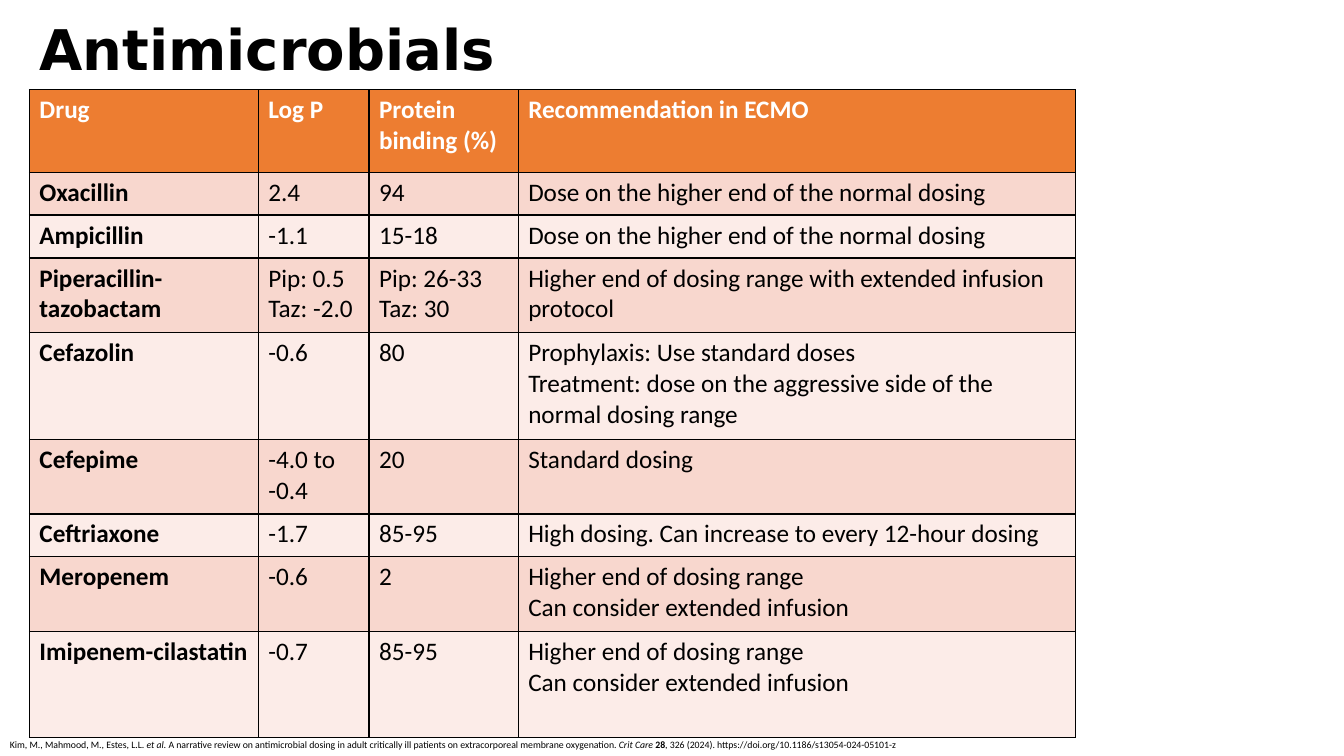
"""Build the slide on antimicrobial dosing in ECMO."""
from lxml.etree import SubElement
from pptx import Presentation
from pptx.dml.color import RGBColor
from pptx.enum.text import MSO_ANCHOR, PP_ALIGN
from pptx.oxml.ns import qn
from pptx.util import Cm, Pt

COLORS = {
    "text": "000000",
    "header_text": "FFFFFF",
    "header": "ED7D31",
    "odd_row": "F8D7CE",
    "even_row": "FCECE8",
    "border": "000000",
}
COLUMN_WIDTHS = [5.77, 2.79, 3.76, 14.05]
ROW_HEIGHTS = [2.08, 1.08, 1.08, 1.88, 2.69, 1.88, 1.08, 1.88, 2.67]
ROWS = [
    ("Drug", "Log P", "Protein binding (%)", "Recommendation in ECMO"),
    ("Oxacillin", "2.4", "94", "Dose on the higher end of the normal dosing"),
    ("Ampicillin", "-1.1", "15-18", "Dose on the higher end of the normal dosing"),
    ("Piperacillin-tazobactam", "Pip: 0.5\nTaz: -2.0", "Pip: 26-33\nTaz: 30",
     "Higher end of dosing range with extended infusion protocol"),
    ("Cefazolin", "-0.6", "80",
     "Prophylaxis: Use standard doses\v"
     "Treatment: dose on the aggressive side of the normal dosing range"),
    ("Cefepime", "-4.0 to -0.4", "20", "Standard dosing"),
    ("Ceftriaxone", "-1.7", "85-95", "High dosing. Can increase to every 12-hour dosing"),
    ("Meropenem", "-0.6", "2", "Higher end of dosing range\nCan consider extended infusion"),
    ("Imipenem-cilastatin", "-0.7", "85-95",
     "Higher end of dosing range\nCan consider extended infusion"),
]
CITATION = [
    ("Kim, M., Mahmood, M., Estes, L.L. ", False, False),
    ("et al.", False, True),
    (" A narrative review on antimicrobial dosing in adult critically ill patients"
     " on extracorporeal membrane oxygenation. ", False, False),
    ("Crit Care ", False, True),
    ("28", True, False),
    (", 326 (2024). https://doi.org/10.1186/s13054-024-05101-z", False, False),
]


def set_font(font, name, size, color, bold=False):
    font.name = name
    font.size = Pt(size)
    font.bold = bold
    font.color.rgb = RGBColor.from_string(COLORS[color])


def add_borders(cell):
    properties = cell._tc.get_or_add_tcPr()
    for side in ("lnL", "lnR", "lnT", "lnB"):
        line = SubElement(properties, qn(f"a:{side}"), w=str(Pt(1)))
        fill = SubElement(line, qn("a:solidFill"))
        SubElement(fill, qn("a:srgbClr"), val=COLORS["border"])


presentation = Presentation()
presentation.slide_width = Cm(33.87)
presentation.slide_height = Cm(19.05)
slide = presentation.slides.add_slide(presentation.slide_layouts[5])

title = slide.shapes.title
title.left, title.top, title.width, title.height = Cm(0.74), Cm(0.43), Cm(18), Cm(1.8)
title.text_frame.text = "Antimicrobials"
title.text_frame.vertical_anchor = MSO_ANCHOR.MIDDLE
paragraph = title.text_frame.paragraphs[0]
paragraph.alignment = PP_ALIGN.LEFT
paragraph.line_spacing = 0.9
set_font(paragraph.font, "DejaVu Sans", 40, "text", bold=True)

table = slide.shapes.add_table(
    len(ROWS), len(COLUMN_WIDTHS), Cm(0.74), Cm(2.26),
    Cm(sum(COLUMN_WIDTHS)), Cm(sum(ROW_HEIGHTS))).table
for column, width in zip(table.columns, COLUMN_WIDTHS):
    column.width = Cm(width)
for row_index, (row, height, texts) in enumerate(zip(table.rows, ROW_HEIGHTS, ROWS)):
    row.height = Cm(height)
    is_header = row_index == 0
    row_fill = "header" if is_header else "odd_row" if row_index % 2 else "even_row"
    for column_index, (cell, text) in enumerate(zip(row.cells, texts)):
        add_borders(cell)
        cell.fill.solid()
        cell.fill.fore_color.rgb = RGBColor.from_string(COLORS[row_fill])
        cell.text_frame.text = text
        for paragraph in cell.text_frame.paragraphs:
            set_font(paragraph.font, "Calibri", 18, "header_text" if is_header else "text",
                     bold=is_header or column_index == 0)

citation = slide.shapes.add_textbox(Cm(0), Cm(18.49), Cm(24.69), Cm(0.56))
citation.text_frame.word_wrap = True
paragraph = citation.text_frame.paragraphs[0]
set_font(paragraph.font, "Calibri", 7, "text")
for text, bold, italic in CITATION:
    run = paragraph.add_run()
    run.text = text
    set_font(run.font, "Calibri", 7, "text", bold)
    run.font.italic = italic

presentation.save("out.pptx")
